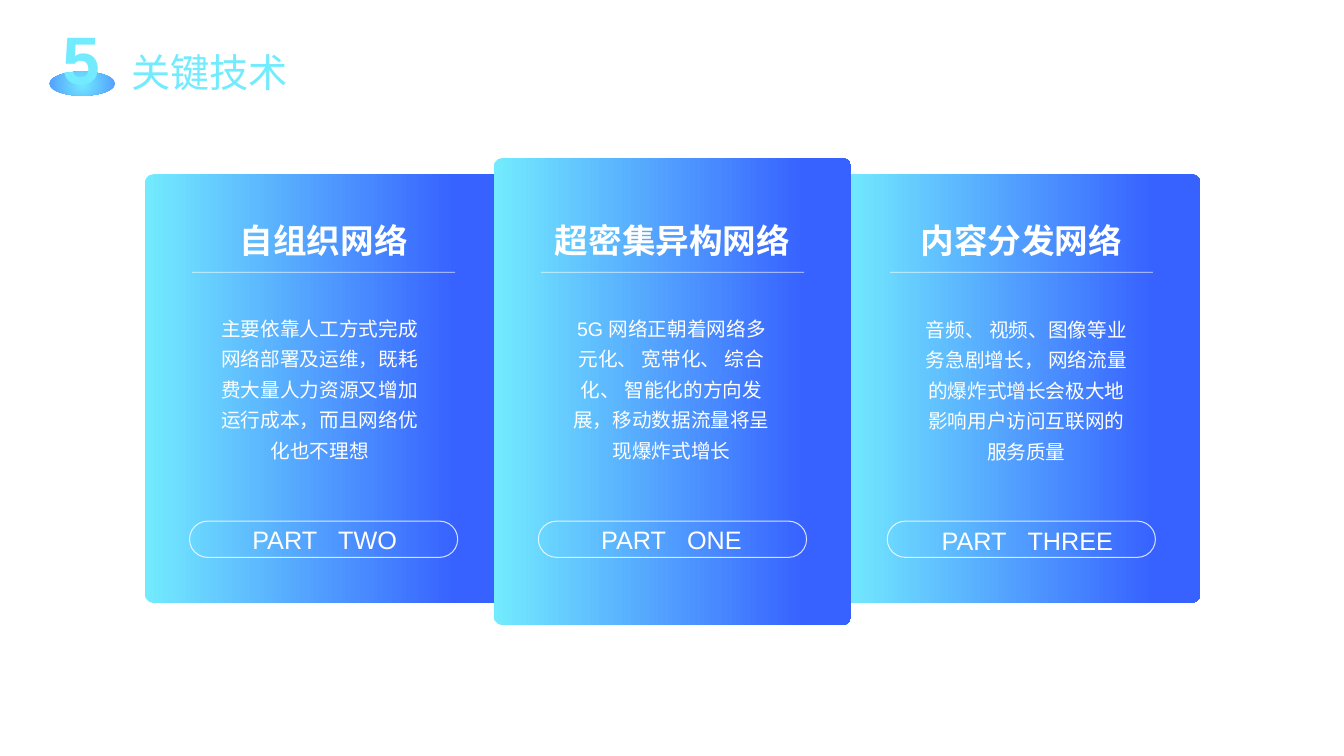
import pptx
import pptx.dml.color
import pptx.enum.shapes
import pptx.enum.text
import pptx.oxml
import pptx.oxml.ns
import pptx.util

Inches = pptx.util.Inches
Pt = pptx.util.Pt
Kind = pptx.enum.shapes.MSO_SHAPE
NS = pptx.oxml.ns.nsdecls("a")


def hue(code):
    return pptx.dml.color.RGBColor.from_string(code)


def node(xml):
    """Make a drawing element from a tag with its attributes."""
    return pptx.oxml.parse_xml(f"<a:{xml} {NS}/>")


class Deck:
    font = "Arial"
    white = "FFFFFF"
    cyan = "73EBFE"
    blue = "3762FF"
    sky = "519DFF"

    def __init__(self, slide):
        self.slide = slide

    def blend(self, fill, end, angle=0, stop=1):
        """Set a linear gradient from cyan; the angle runs clockwise."""
        fill.gradient()
        fill.gradient_angle = (360 - angle) % 360
        for mark, code, place in zip(fill.gradient_stops, (self.cyan, end), (0, stop)):
            mark.color.rgb = hue(code)
            mark.position = place

    def stroke(self, line, width):
        """Give a line the thin, slightly clear white."""
        line.width = Pt(width)
        line.color.rgb = hue(self.white)
        for tint in line._ln.iter(pptx.oxml.ns.qn("a:srgbClr")):
            tint.append(node('alpha val="80000"'))

    def shape(self, kind, x, y, w, h, round=None):
        item = self.slide.shapes.add_shape(kind, Inches(x), Inches(y), Inches(w), Inches(h))
        item.shadow.inherit = False
        item.fill.background()
        item.line.fill.background()
        if round is not None:
            item.adjustments[0] = round
        return item

    def panel(self, x, y, w, h):
        item = self.shape(Kind.ROUNDED_RECTANGLE, x, y, w, h, 0.024)
        self.blend(item.fill, self.blue, stop=0.87)

    def pill(self, x, y, w, h):
        item = self.shape(Kind.ROUNDED_RECTANGLE, x, y, w, h, 0.5)
        self.stroke(item.line, 0.75)

    def disc(self, x, y, w, h):
        item = self.shape(Kind.OVAL, x, y, w, h)
        self.blend(item.fill, self.sky)
        lin = next(item._element.spPr.iter(pptx.oxml.ns.qn("a:lin")))
        glow = node('path path="circle"')
        glow.append(node('fillToRect l="50000" t="50000" r="50000" b="50000"'))
        lin.getparent().replace(lin, glow)

    def rule(self, x, y, w):
        kind = pptx.enum.shapes.MSO_CONNECTOR.STRAIGHT
        item = self.slide.shapes.add_connector(kind, Inches(x), Inches(y), Inches(x + w), Inches(y))
        item._element.spPr.append(node("effectLst"))
        self.stroke(item.line, 0.5)

    def text(self, words, x, y, w, h, size, bold=False, wrap=True, lead=None, slant=None, gap=0):
        """Add centred text; slant turns on the gradient, gap widens spaces in points."""
        box = self.slide.shapes.add_textbox(Inches(x), Inches(y), Inches(w), Inches(h))
        frame = box.text_frame
        frame.word_wrap = wrap
        frame.auto_size = pptx.enum.text.MSO_AUTO_SIZE.SHAPE_TO_FIT_TEXT
        para = frame.paragraphs[0]
        para.alignment = pptx.enum.text.PP_ALIGN.CENTER
        para.line_spacing = lead
        look = {"name": self.font, "size": Pt(size), "bold": bold}
        for part in words.partition(" ") if gap else [words]:
            run = para.add_run()
            run.text = part
            for key, value in look.items():
                setattr(run.font, key, value)
            if slant is None:
                run.font.color.rgb = hue(self.white)
            else:
                self.blend(run.font.fill, self.blue, slant)
            if part == " ":
                run._r.get_or_add_rPr().set("spc", str(gap * 100))

    def card(self, mid, top, high, head, body, wide, shift, part, nudge, drop):
        """Add one card, all parts of it set around the centre mid."""
        self.panel(mid - 1.775, top, 3.55, high)
        self.rule(mid - 1.305, 2.7, 2.61)
        self.text(head, mid - 1.345, 2.13, 2.69, 0.5, 24, bold=True)
        self.pill(mid - 1.33, 5.17, 2.66, 0.36)
        self.text(body, mid + shift - wide / 2, 3.02 + drop, wide, 1.61, 14, lead=1.3)
        self.text(part, mid + nudge - 1.1, 5.15 + drop, 2.2, 0.4, 18, wrap=False, gap=10)


SIDE = (1.73, 4.25)
FRONT = (1.57, 4.63)
CARDS = [
    (2, *SIDE, "内容分发网络",
     "音频、 视频、图像等业务急剧增长， 网络流量的爆炸式增长会极大地影响用户访问互联网的服务质量",
     2.29, 0.05, "PART THREE", 0.06, 0.01),
    (0, *SIDE, "自组织网络",
     "主要依靠人工方式完成网络部署及运维，既耗费大量人力资源又增加运行成本，而且网络优化也不理想",
     2.29, -0.04, "PART TWO", 0.01, 0),
    (1, *FRONT, "超密集异构网络",
     "5G 网络正朝着网络多元化、 宽带化、 综合化、 智能化的方向发展，移动数据流量将呈现爆炸式增长",
     2.17, -0.01, "PART ONE", -0.01, 0),
]


def main():
    show = pptx.Presentation()
    show.slide_width = Inches(13.33)
    show.slide_height = Inches(7.5)
    deck = Deck(show.slides.add_slide(show.slide_layouts[6]))
    deck.text("关键技术", 1.06, 0.43, 2.04, 0.57, 28, slant=45)
    deck.disc(0.49, 0.71, 0.65, 0.24)
    deck.text("5", 0.52, 0.12, 0.56, 0.91, 48, bold=True, slant=90)
    for slot, *rest in CARDS:
        deck.card(3.21 + slot * 3.46, *rest)
    show.save("out.pptx")


if __name__ == "__main__":
    main()
